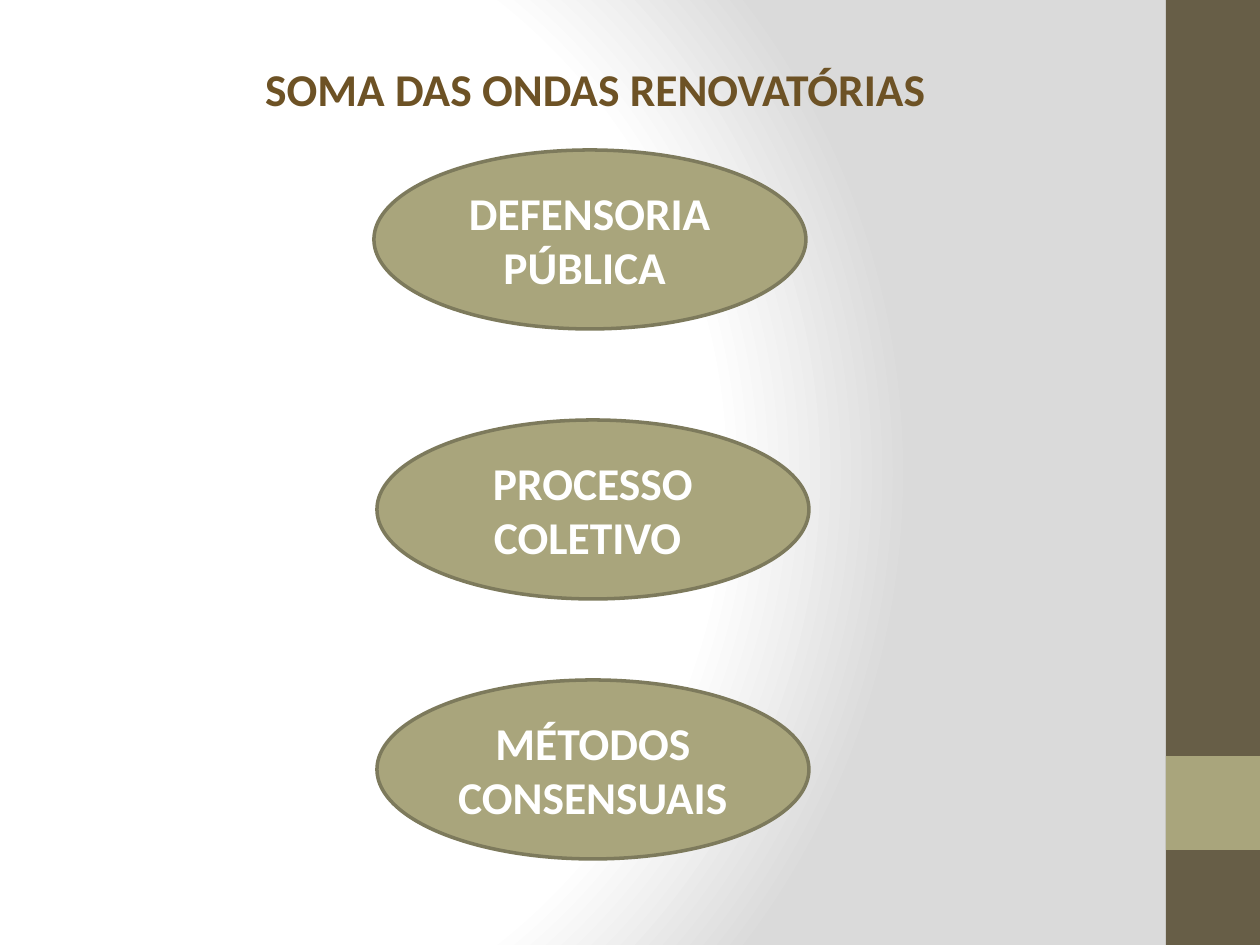
from dataclasses import dataclass

import pptx
import pptx.dml.color
import pptx.enum.shapes
import pptx.enum.text
import pptx.oxml
import pptx.oxml.ns
import pptx.util

EMU_PER_PX = 914400 // 126


def px(length):
    return pptx.util.Emu(length * EMU_PER_PX)


@dataclass(frozen=True)
class Theme:
    font: str = "Calibri"
    text_size: int = 26
    heading: str = "6D5225"
    label: str = "FFFFFF"
    sidebar: str = "675E47"
    accent: str = "A9A57C"
    outline: str = "7D7A5C"
    outline_width: int = 2
    backdrop: tuple = ((0, "FFFFFF"), (75, "FFFFFF"), (100, "DADADA"))


class SlideBuilder:
    def __init__(self, slide, theme):
        self.slide = slide
        self.theme = theme

    def background(self):
        self.slide.background.fill.solid()
        solid = self.slide.element.find(".//" + pptx.oxml.ns.qn("a:solidFill"))
        stops = "".join(
            f'<a:gs pos="{percent * 1000}"><a:srgbClr val="{color}"/></a:gs>'
            for percent, color in self.theme.backdrop
        )
        gradient = pptx.oxml.parse_xml(
            f'<a:gradFill {pptx.oxml.ns.nsdecls("a")} rotWithShape="1">'
            f"<a:gsLst>{stops}</a:gsLst>"
            '<a:path path="circle"><a:fillToRect l="20000" t="50000" r="100000" b="50000"/></a:path>'
            "</a:gradFill>"
        )
        solid.getparent().replace(solid, gradient)

    def label(self, shape, text, color):
        shape.text_frame.word_wrap = True
        paragraph = shape.text_frame.paragraphs[0]
        paragraph.text = text
        paragraph.alignment = pptx.enum.text.PP_ALIGN.CENTER
        paragraph.font.name = self.theme.font
        paragraph.font.size = pptx.util.Pt(self.theme.text_size)
        paragraph.font.bold = True
        paragraph.font.color.rgb = pptx.dml.color.RGBColor.from_string(color)

    def title(self, text, left, top, width, height):
        heading = self.slide.shapes.title
        heading.left, heading.top = px(left), px(top)
        heading.width, heading.height = px(width), px(height)
        frame = heading.text_frame
        frame.auto_size = pptx.enum.text.MSO_AUTO_SIZE.NONE
        frame.vertical_anchor = pptx.enum.text.MSO_ANCHOR.TOP
        frame.margin_left = px(28)
        self.label(heading, text, self.theme.heading)

    def shape(self, kind, fill, left, top, width, height):
        shape = self.slide.shapes.add_shape(kind, px(left), px(top), px(width), px(height))
        shape.shadow.inherit = False
        shape.fill.solid()
        shape.fill.fore_color.rgb = pptx.dml.color.RGBColor.from_string(fill)
        return shape

    def bar(self, fill, left, top, width, height):
        bar = self.shape(pptx.enum.shapes.MSO_SHAPE.RECTANGLE, fill, left, top, width, height)
        bar.line.fill.background()

    def ellipse(self, text, left, top, width, height):
        ellipse = self.shape(
            pptx.enum.shapes.MSO_SHAPE.OVAL, self.theme.accent, left, top, width, height
        )
        ellipse.line.color.rgb = pptx.dml.color.RGBColor.from_string(self.theme.outline)
        ellipse.line.width = pptx.util.Pt(self.theme.outline_width)
        ellipse.text_frame.vertical_anchor = pptx.enum.text.MSO_ANCHOR.MIDDLE
        self.label(ellipse, text, self.theme.label)


def main():
    presentation = pptx.Presentation()
    presentation.slide_width, presentation.slide_height = px(1260), px(945)
    theme = Theme()
    waves = SlideBuilder(presentation.slides.add_slide(presentation.slide_layouts[5]), theme)

    waves.background()
    waves.bar(theme.sidebar, 1166, 0, 94, 945)
    waves.bar(theme.accent, 1166, 756, 94, 94)
    waves.title("SOMA DAS ONDAS RENOVATÓRIAS", 63, 55, 1050, 827)
    for wave, left, top in (
        ("DEFENSORIA PÚBLICA ", 374, 150),
        ("PROCESSO COLETIVO ", 377, 420),
        ("MÉTODOS CONSENSUAIS", 377, 680),
    ):
        waves.ellipse(wave, left, top, 432, 179)

    presentation.save("out.pptx")


if __name__ == "__main__":
    main()
